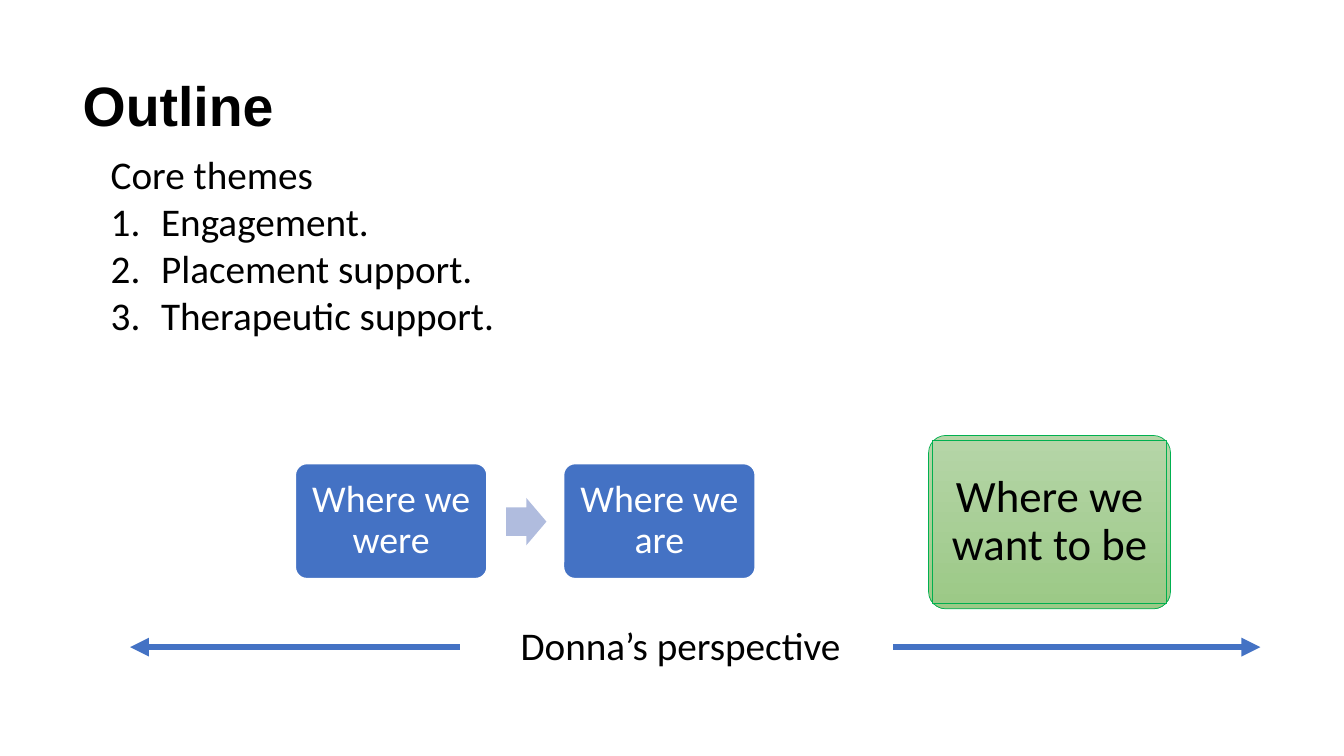
from dataclasses import dataclass
from typing import Optional

from lxml import etree
from pptx import Presentation
from pptx import util as u
from pptx.dml.color import RGBColor
from pptx.enum import shapes, text
from pptx.oxml.ns import qn

PX = 9144  # 100 px to the inch
COLORS = {
    "black": "000000",
    "white": "FFFFFF",
    "blue": "4472C4",
    "pale_blue": "B0BCDE",
    "green_line": "00B050",
    "green_top": "B5D5A7",
    "green_bottom": "9CC987",
}


@dataclass
class Block:
    preset: shapes.MSO_SHAPE
    left: int
    top: int
    width: int
    height: int
    fill: tuple[str, ...]  # two colours make a downward gradient
    adjustments: tuple[float, ...] = ()
    line: Optional[str] = None
    line_pt: float = 1
    label: str = ""
    size: int = 27
    color: str = "white"
    inset: int = 11


@dataclass
class Arrow:
    start: int
    end: int
    y: int = 642


def stage(left: int, label: str) -> Block:
    return Block(shapes.MSO_SHAPE.ROUNDED_RECTANGLE, left, 460, 190, 114, ("blue",),
                 (0.1,), "white", label=label)


GREEN = ("green_top", "green_bottom")
BLOCKS = [
    stage(293, "Where we were"),
    Block(shapes.MSO_SHAPE.RIGHT_ARROW, 502, 494, 40, 47, ("pale_blue",), (0.6, 0.5)),
    stage(559, "Where we are"),
    Block(shapes.MSO_SHAPE.ROUNDED_RECTANGLE, 921, 432, 240, 172, GREEN, (0.1,),
          "green_line", 0.5),
    Block(shapes.MSO_SHAPE.RECTANGLE, 925, 437, 232, 162, GREEN, (), "green_line", 0.5,
          "Where we want to be", 32, "black", 9),
]
ARROWS = [Arrow(886, 1250), Arrow(456, 129)]
THEMES = ["Engagement.", "Placement support.", "Therapeutic support."]


def px(length: int) -> u.Emu:
    return u.Emu(length * PX)


def rgb(name: str) -> RGBColor:
    return RGBColor.from_string(COLORS[name])


def style(paragraph, size: float, color: str = "black", font: str = "Calibri",
          bold: bool = False, spacing: float = 0.9) -> None:
    paragraph.line_spacing = spacing
    for run in paragraph.runs:
        run.font.name = font
        run.font.size = u.Pt(size)
        run.font.bold = bold
        run.font.color.rgb = rgb(color)


def number(paragraph) -> None:
    """Give the paragraph an automatic number with a hanging indent."""
    properties = paragraph._p.get_or_add_pPr()
    properties.set("marL", str(px(50)))
    properties.set("indent", str(-px(50)))
    etree.SubElement(properties, qn("a:buFont"), typeface="+mj-lt")
    etree.SubElement(properties, qn("a:buAutoNum"), type="arabicPeriod")


def add_text(slide, left: int, top: int, width: int, height: int, lines: list[str]):
    frame = slide.shapes.add_textbox(px(left), px(top), px(width), px(height)).text_frame
    frame.word_wrap = True
    frame.text = "\n".join(lines)
    for index, paragraph in enumerate(frame.paragraphs):
        if index:
            paragraph.space_before = u.Pt(10)
        style(paragraph, 28, spacing=0.7)
    return frame


def add_block(slide, block: Block) -> None:
    shape = slide.shapes.add_shape(block.preset, px(block.left), px(block.top),
                                   px(block.width), px(block.height))
    shape.shadow.inherit = False
    for index, value in enumerate(block.adjustments):
        shape.adjustments[index] = value
    if len(block.fill) > 1:
        shape.fill.gradient()
        shape.fill.gradient_angle = 270
        for stop, name, position in zip(shape.fill.gradient_stops, block.fill, (0, 1)):
            stop.color.rgb = rgb(name)
            stop.position = position
    else:
        shape.fill.solid()
        shape.fill.fore_color.rgb = rgb(block.fill[0])
    if block.line:
        shape.line.color.rgb = rgb(block.line)
        shape.line.width = u.Pt(block.line_pt)
    else:
        shape.line.fill.background()
    if block.label:
        frame = shape.text_frame
        frame.word_wrap = True
        frame.vertical_anchor = text.MSO_ANCHOR.MIDDLE
        frame.margin_left = frame.margin_right = px(block.inset)
        frame.margin_top = frame.margin_bottom = px(block.inset)
        frame.text = block.label
        frame.paragraphs[0].alignment = text.PP_ALIGN.CENTER
        style(frame.paragraphs[0], block.size, block.color)


def add_arrow(slide, arrow: Arrow) -> None:
    connector = slide.shapes.add_connector(shapes.MSO_CONNECTOR.STRAIGHT, px(arrow.start),
                                           px(arrow.y), px(arrow.end), px(arrow.y))
    connector.line.color.rgb = rgb("blue")
    connector.line.width = u.Pt(4.5)
    etree.SubElement(connector.line._get_or_add_ln(), qn("a:tailEnd"), type="triangle")
    etree.SubElement(connector._element.spPr, qn("a:effectLst"))


def main() -> None:
    deck = Presentation()
    deck.slide_width, deck.slide_height = px(1333), px(750)
    slide = deck.slides.add_slide(deck.slide_layouts[5])

    title = slide.shapes.title
    title.left, title.top, title.width, title.height = px(72), px(74), px(440), px(68)
    title.text_frame.text = "Outline"
    title.text_frame.vertical_anchor = text.MSO_ANCHOR.BOTTOM
    title.text_frame.auto_size = text.MSO_AUTO_SIZE.NONE
    title.text_frame.paragraphs[0].alignment = text.PP_ALIGN.LEFT
    style(title.text_frame.paragraphs[0], 39.6, font="Arial", bold=True)

    themes = add_text(slide, 100, 157, 1150, 190, ["Core themes", *THEMES])
    for theme in themes.paragraphs[1:]:
        number(theme)
    perspective = add_text(slide, 470, 624, 410, 45, ["Donna’s perspective"])
    perspective.paragraphs[0].alignment = text.PP_ALIGN.CENTER

    for block in BLOCKS:
        add_block(slide, block)
    for arrow in ARROWS:
        add_arrow(slide, arrow)
    deck.save("out.pptx")


if __name__ == "__main__":
    main()
